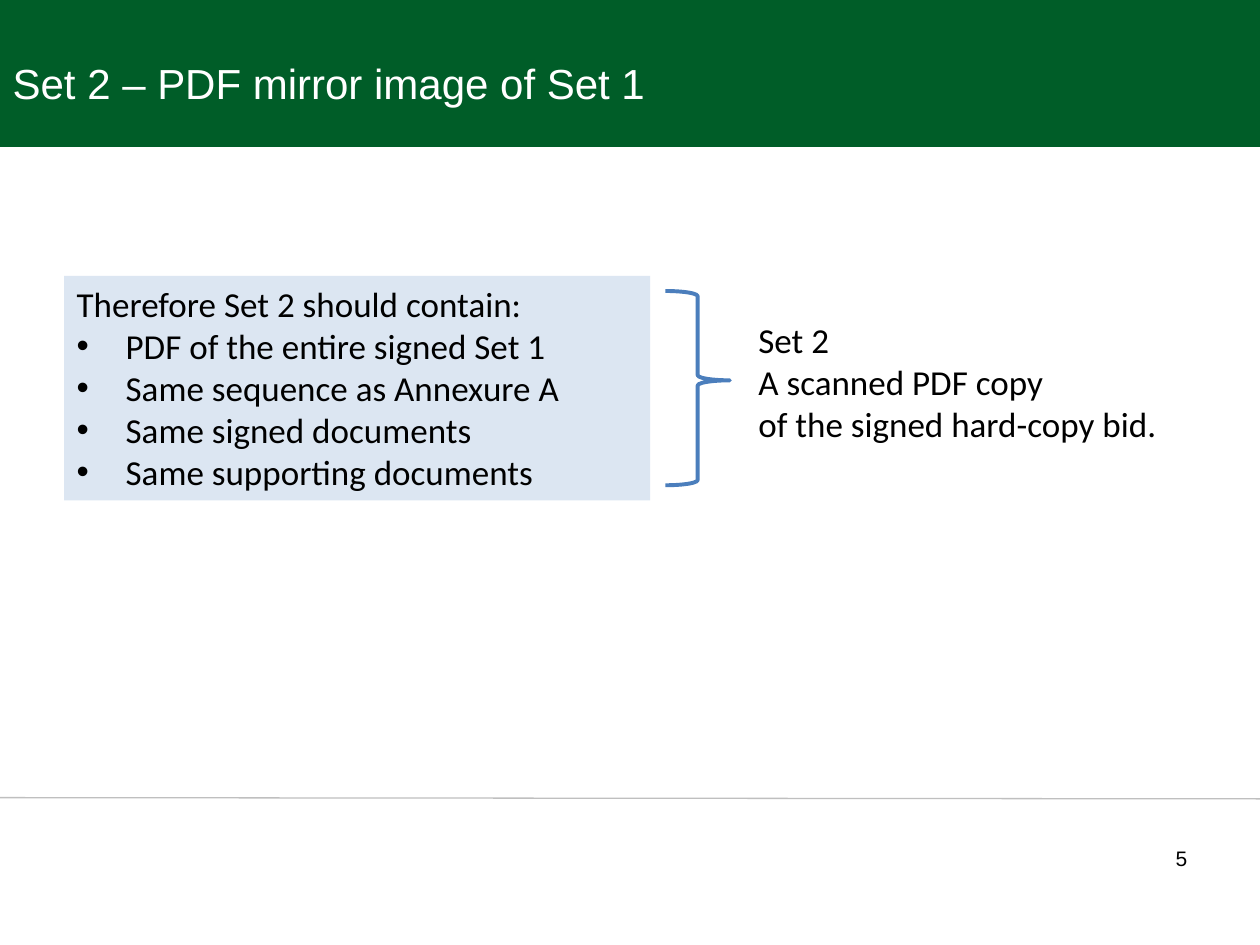
from lxml import etree
from pptx import Presentation
from pptx.dml.color import RGBColor
from pptx.enum import shapes, text
from pptx.oxml.ns import qn
from pptx.util import Pt

COLORS = {
    "band": "005D28",
    "rule": "BFBFBF",
    "panel": "DCE6F2",
    "brace": "4B7EBC",
    "white": "FFFFFF",
    "black": "000000",
}
POINTS = [
    "PDF of the entire signed Set 1",
    "Same sequence as Annexure A",
    "Same signed documents",
    "Same supporting documents",
]
RESULT = ["Set 2", "A scanned PDF copy", "of the signed hard-copy bid."]


def color(name):
    return RGBColor.from_string(COLORS[name])


def place(shape, box):
    shape.left, shape.top, shape.width, shape.height = map(Pt, box)


def style(para, font, size, name, align=text.PP_ALIGN.LEFT):
    para.alignment = align
    para.font.name = font
    para.font.size = Pt(size)
    para.font.color.rgb = color(name)


def add_rect(slide, box, fill):
    rect = slide.shapes.add_shape(shapes.MSO_SHAPE.RECTANGLE, *map(Pt, box))
    rect.shadow.inherit = False
    rect.fill.solid()
    rect.fill.fore_color.rgb = color(fill)
    rect.line.fill.background()
    return rect


def add_title(slide, words, box):
    title = slide.shapes.title
    place(title, box)
    frame = title.text_frame
    frame.text = words
    frame.auto_size = text.MSO_AUTO_SIZE.NONE
    frame.vertical_anchor = text.MSO_ANCHOR.BOTTOM
    style(frame.paragraphs[0], "Arial", 24, "white")
    return title


def add_bullet(para):
    props = para._p.get_or_add_pPr()
    props.set("marL", str(Pt(28)))
    props.set("indent", str(-Pt(28)))
    etree.SubElement(props, qn("a:buFont")).set("typeface", "Arial")
    etree.SubElement(props, qn("a:buChar")).set("char", "•")


def add_panel(slide, box, fill, lines, bullets=()):
    frame = add_rect(slide, box, fill).text_frame
    frame.word_wrap = True
    frame.vertical_anchor = text.MSO_ANCHOR.TOP
    frame.text = "\n".join([*lines, *bullets])
    for i, para in enumerate(frame.paragraphs):
        if i >= len(lines):
            add_bullet(para)
        style(para, "Calibri", 20, "black")


def add_brace(slide, box):
    brace = slide.shapes.add_shape(shapes.MSO_SHAPE.RIGHT_BRACE, *map(Pt, box))
    brace.shadow.inherit = False
    brace.fill.background()
    brace.line.color.rgb = color("brace")
    brace.line.width = Pt(2.25)
    brace.adjustments[0] = 0.08
    brace.adjustments[1] = 0.46


def add_rule(slide, start, end):
    rule = slide.shapes.add_connector(
        shapes.MSO_CONNECTOR.STRAIGHT, *map(Pt, start + end))
    rule.line.color.rgb = color("rule")
    rule.line.width = Pt(0.75)
    etree.SubElement(rule.element.spPr, qn("a:effectLst"))


def add_number(slide, words, box):
    frame = slide.shapes.add_textbox(*map(Pt, box)).text_frame
    frame.word_wrap = True
    frame.text = words
    style(frame.paragraphs[0], "Arial", 12, "black", text.PP_ALIGN.RIGHT)


def main():
    deck = Presentation()
    deck.slide_width, deck.slide_height = Pt(720), Pt(540)
    slide = deck.slides.add_slide(deck.slide_layouts[5])

    title = add_title(slide, "Set 2 – PDF mirror image of Set 1",
                      (0, -13, 559, 78))
    band = add_rect(slide, (0, 0, 720, 84), "band")
    title.element.addprevious(band.element)

    add_rule(slide, (0, 455.8), (720, 456.5))
    add_number(slide, "5", (72, 479.5, 613.5, 34))
    add_panel(slide, (426.3, 178.5, 255, 80), "white", RESULT)
    add_panel(slide, (36.7, 157.7, 334.8, 128.2), "panel",
              ["Therefore Set 2 should contain:"], POINTS)
    add_brace(slide, (380.3, 166.3, 36.8, 111))
    deck.save("out.pptx")


if __name__ == "__main__":
    main()
